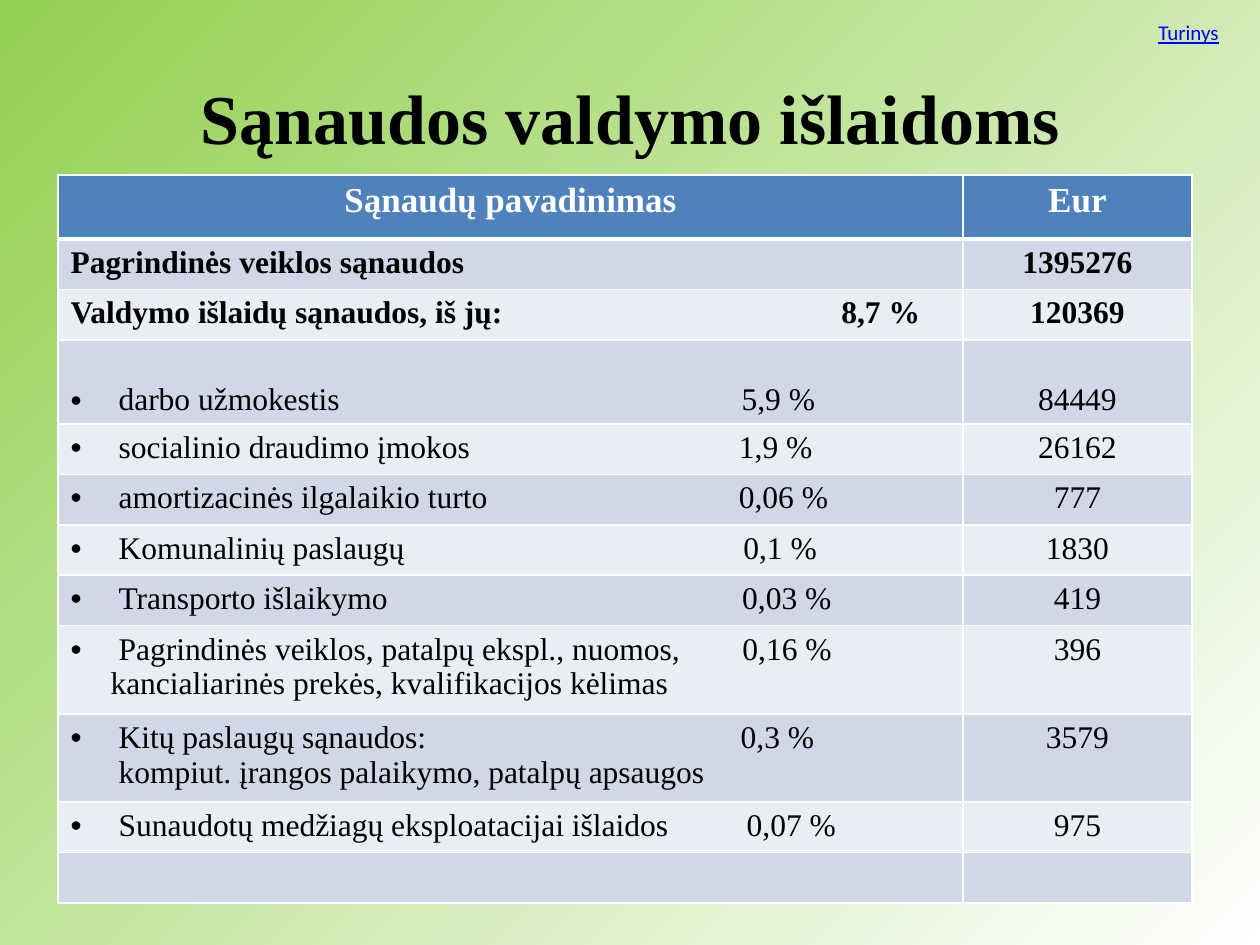
from lxml import etree
from pptx import Presentation, util as u
from pptx.dml.color import RGBColor
from pptx.enum import text
from pptx.oxml import ns

SERIF = "Times New Roman"
BLACK, WHITE, LINK = "000000", "FFFFFF", "0000FF"
HEADER, BANDS = "4F81BD", ("D0D8E8", "E9EDF4")
HANG, SPACE = 48, 8
COLUMNS = (905, 229)
ROW, TALL, TOP = 48, 84, 64

COSTS = [
    ("darbo užmokestis", 401, "5,9 %", "", 0, "84449"),
    ("socialinio draudimo įmokos", 268, "1,9 %", "", 0, "26162"),
    ("amortizacinės ilgalaikio turto", 251, "0,06 %", "", 0, "777"),
    ("Komunalinių paslaugų", 338, "0,1 %", "", 0, "1830"),
    ("Transporto išlaikymo", 354, "0,03 %", "", 0, "419"),
    ("Pagrindinės veiklos, patalpų ekspl., nuomos,", 63, "0,16 %",
     "kancialiarinės prekės, kvalifikacijos kėlimas", 40, "396"),
    ("Kitų paslaugų sąnaudos:", 314, "0,3 %",
     "kompiut. įrangos palaikymo, patalpų apsaugos", 48, "3579"),
    ("Sunaudotų medžiagų eksploatacijai išlaidos", 78, "0,07 %", "", 0, "975"),
]


def px(value):
    """Turn px into EMU."""
    return u.Emu(round(value * 914400 / 126))


def rgb(value):
    """Turn a hex string into a colour."""
    return RGBColor.from_string(value)


def add_run(paragraph, words, size=18, color=BLACK, bold=False, font=SERIF):
    """Add one formatted run."""
    run = paragraph.add_run()
    run.text = words
    run.font.size = u.Pt(size)
    run.font.name = font
    run.font.bold = bold
    run.font.color.rgb = rgb(color)
    return run


def add_gap(paragraph, width, bold=False):
    """Add one space, letter-spaced to a width in px."""
    run = add_run(paragraph, " ", bold=bold)
    run.font._element.set("spc", str(round((width - SPACE) * 72 / 126) * 100))


def set_indent(paragraph, margin, bullet=False):
    """Set the left margin, with a hanging bullet if asked."""
    properties = paragraph._p.get_or_add_pPr()
    properties.set("marL", str(px(margin)))
    properties.set("indent", str(-px(margin) if bullet else 0))
    if bullet:
        font = etree.SubElement(properties, ns.qn("a:buFont"))
        font.set("typeface", "Arial")
        etree.SubElement(properties, ns.qn("a:buChar")).set("char", "•")


def add_label(slide, box, words, size, align, **style):
    """Add a one-line text box and return its run."""
    shape = slide.shapes.add_textbox(*map(px, box))
    frame = shape.text_frame
    frame.word_wrap = True
    frame.vertical_anchor = text.MSO_ANCHOR.MIDDLE
    paragraph = frame.paragraphs[0]
    paragraph.alignment = align
    return add_run(paragraph, words, size, **style)


def style_cell(cell, fill, top=1, bottom=1):
    """Set white borders in points and a solid fill."""
    properties = cell._tc.get_or_add_tcPr()
    for side, width in (("L", 1), ("R", 1), ("T", top), ("B", bottom)):
        line = etree.SubElement(properties, ns.qn(f"a:ln{side}"))
        line.set("w", str(u.Pt(width)))
        solid = etree.SubElement(line, ns.qn("a:solidFill"))
        etree.SubElement(solid, ns.qn("a:srgbClr")).set("val", WHITE)
    cell.fill.solid()
    cell.fill.fore_color.rgb = rgb(fill)


def fill_centred(cell, words, **style):
    """Write one centred line into a cell."""
    paragraph = cell.text_frame.paragraphs[0]
    paragraph.alignment = text.PP_ALIGN.CENTER
    add_run(paragraph, words, **style)


def fill_cost(cell, name, gap, share, detail, margin):
    """Write a bulleted cost with its share and optional second line."""
    paragraph = cell.text_frame.paragraphs[0]
    set_indent(paragraph, HANG, bullet=True)
    add_run(paragraph, name)
    add_gap(paragraph, gap)
    add_run(paragraph, share)
    if detail:
        second = cell.text_frame.add_paragraph()
        set_indent(second, margin)
        add_run(second, detail)


def add_cost_table(slide):
    """Add the table of management costs."""
    heights = [TOP, ROW, ROW, TALL]
    heights += [TALL if cost[3] else ROW for cost in COSTS[1:]] + [ROW]
    frame = slide.shapes.add_table(len(heights), 2, px(58), px(175),
                                   px(sum(COLUMNS)), px(sum(heights)))
    table = frame.table
    for column, width in zip(table.columns, COLUMNS):
        column.width = px(width)
    for index, height in enumerate(heights):
        table.rows[index].height = px(height)
        for cell in table.rows[index].cells:
            style_cell(cell, BANDS[(index - 1) % 2] if index else HEADER,
                       top=3 if index == 1 else 1, bottom=1 if index else 3)

    for column, words in enumerate(("Sąnaudų pavadinimas", "Eur")):
        fill_centred(table.cell(0, column), words, size=20, color=WHITE, bold=True)
    totals = (("Pagrindinės veiklos sąnaudos", "1395276"),
              ("Valdymo išlaidų sąnaudos, iš jų:", "120369"))
    for row, (name, amount) in enumerate(totals, 1):
        paragraph = table.cell(row, 0).text_frame.paragraphs[0]
        add_run(paragraph, name, bold=True)
        fill_centred(table.cell(row, 1), amount, bold=True)
    add_gap(paragraph, 339, bold=True)
    add_run(paragraph, "8,7 %", bold=True)

    for row, (*cost, amount) in enumerate(COSTS, 3):
        fill_cost(table.cell(row, 0), *cost)
        fill_centred(table.cell(row, 1), amount)
    for cell in table.rows[3].cells:
        cell.vertical_anchor = text.MSO_ANCHOR.BOTTOM


def set_background(slide):
    """Shade the slide from green at top left to white."""
    fill = slide.background.fill
    fill.gradient()
    fill.gradient_angle = 315
    for stop, color in zip(fill.gradient_stops, ("92D050", WHITE)):
        stop.color.rgb = rgb(color)


def main():
    """Build and save the slide."""
    presentation = Presentation()
    presentation.slide_width, presentation.slide_height = px(1260), px(945)
    slide = presentation.slides.add_slide(presentation.slide_layouts[6])
    set_background(slide)
    add_label(slide, (63, 38, 1134, 158), "Sąnaudos valdymo išlaidoms", 40,
              text.PP_ALIGN.CENTER, bold=True)
    add_cost_table(slide)
    contents = add_label(slide, (1146, 13, 114, 38), "Turinys", 12,
                         text.PP_ALIGN.LEFT, color=LINK, font="Calibri")
    contents.font.underline = True
    presentation.save("out.pptx")


if __name__ == "__main__":
    main()
